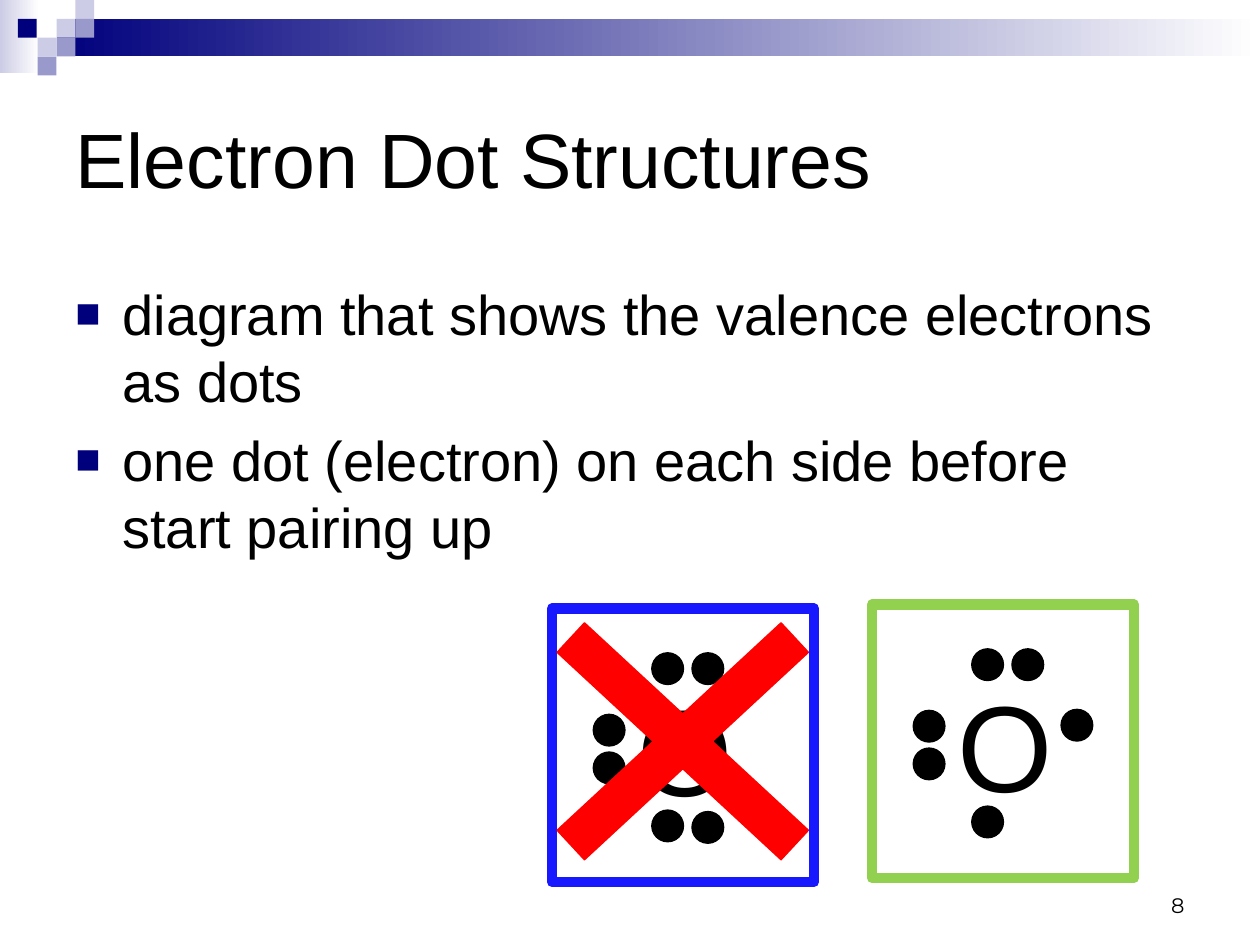
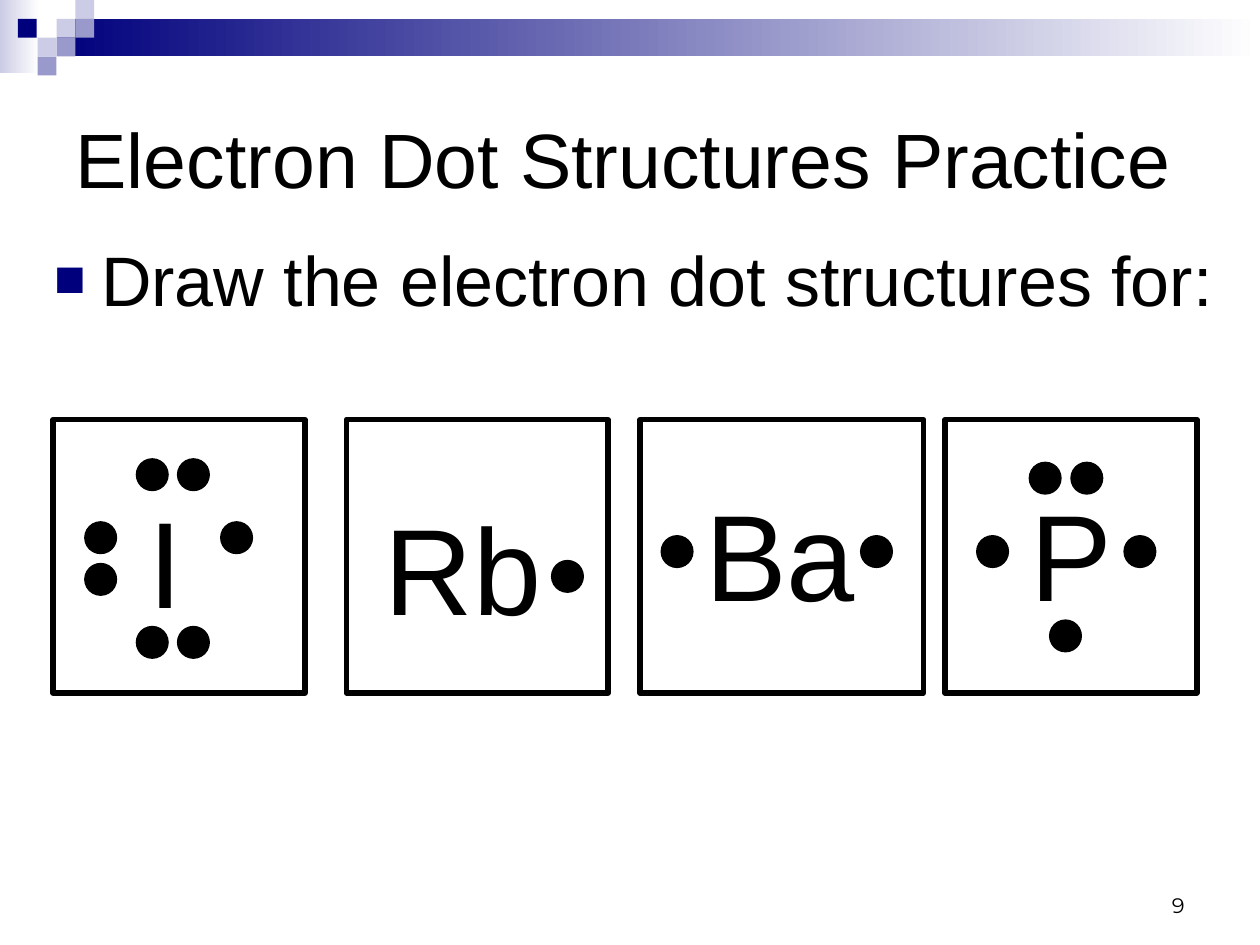
from lxml.etree import SubElement as Sub
from pptx import Presentation
from pptx.dml.color import RGBColor as Rgb
from pptx.enum.shapes import MSO_SHAPE as Kind
from pptx.enum.text import MSO_ANCHOR as Anchor, MSO_AUTO_SIZE as Fit, PP_ALIGN as Align
from pptx.oxml.ns import qn
from pptx.util import Cm, Pt

HUES = {
    "black": "000000", "white": "FFFFFF", "navy": "00007D", "pale": "CCCCE6",
    "mid": "9999CC", "blue": "1818FF", "green": "92D050", "red": "FF0000",
}
FONT = "Arial"
TILE = 0.38
TILES = [(3, 1, "pale"), (4, 0, "pale"), (4, 1, "mid"), (2, 2, "pale"),
         (0.95, 1, "navy"), (3, 2, "mid"), (2, 3, "mid")]
DOT = 0.64
BOX_H = 5.51
OXY = [(2.01, 0.89), (2.82, 0.89), (0.83, 2.13), (0.83, 2.89), (2.01, 4.06)]
ROW_Y = 8.46
ROW = [
    ("I", 1.07, 5.08, (1.68, 1.22, 1.7),
     [(1.68, 0.79), (2.51, 0.79), (0.64, 2.06), (0.64, 2.9),
      (3.38, 2.06), (1.68, 4.17), (2.51, 4.17)]),
    ("Rb", 6.98, 5.28, (0.53, 1.35, 4.24), [(4.14, 2.84)]),
    ("Ba", 12.9, 5.72, (1.07, 1.07, 3.81), [(0.43, 2.34), (4.45, 2.34)]),
    ("P", 19.05, 5.08, (1.47, 1.07, 2.11),
     [(1.7, 0.86), (2.54, 0.86), (0.64, 2.34), (3.61, 2.34), (2.11, 4.04)]),
]


def hue(name):
    return Rgb.from_string(HUES[name])


def add_run(para, text, size, font=FONT):
    run = para.add_run()
    run.text = text
    run.font.size = Pt(size)
    run.font.name = font
    run.font.color.rgb = hue("black")


def add_form(slide, kind, area, fill=None, line=None, width=0.75):
    form = slide.shapes.add_shape(kind, *map(Cm, area))
    form.shadow.inherit = False
    if isinstance(fill, tuple):
        form.fill.gradient()
        form.fill.gradient_angle = 0
        for stop, name in zip(form.fill.gradient_stops, fill):
            stop.color.rgb = hue(name)
    elif fill:
        form.fill.solid()
        form.fill.fore_color.rgb = hue(fill)
    else:
        form.fill.background()
    if line:
        form.line.color.rgb = hue(line)
        form.line.width = Pt(width)
    else:
        form.line.fill.background()
    return form


def add_text(slide, area):
    frame = slide.shapes.add_textbox(*map(Cm, area)).text_frame
    frame.word_wrap = True
    return frame


def add_band(slide):
    add_form(slide, Kind.RECTANGLE, (0, 0, 0.79, 1.47), ("pale", "white"))
    add_form(slide, Kind.RECTANGLE, (3 * TILE, TILE, 24.26, 2 * TILE), ("navy", "white"))
    for col, row, name in TILES:
        add_form(slide, Kind.RECTANGLE, (col * TILE, row * TILE, TILE, TILE), name)


def add_title(slide, text):
    title = slide.shapes.title
    title.left, title.top, title.width, title.height = map(Cm, (1.27, 1.27, 22.86, 3.81))
    frame = title.text_frame
    frame.auto_size = Fit.NONE
    frame.vertical_anchor = Anchor.MIDDLE
    para = frame.paragraphs[0]
    para.alignment = Align.LEFT
    add_run(para, text, 44)


def add_list(slide, area, items, size):
    frame = add_text(slide, area)
    for i, item in enumerate(items):
        para = frame.add_paragraph() if i else frame.paragraphs[0]
        props = para._p.get_or_add_pPr()
        props.set("marL", str(Cm(0.95)))
        props.set("indent", str(-Cm(0.95)))
        space = Sub(props, qn("a:spcBef"))
        Sub(space, qn("a:spcPct"), val="20000")
        paint = Sub(props, qn("a:buClr"))
        Sub(paint, qn("a:srgbClr"), val=HUES["navy"])
        Sub(props, qn("a:buSzPct"), val="75000")
        Sub(props, qn("a:buFont"), typeface=FONT)
        Sub(props, qn("a:buChar"), char="■")
        add_run(para, item, size)


def add_page(slide, num):
    frame = add_text(slide, (22.66, 17.35, 1.47, 1.27))
    frame.vertical_anchor = Anchor.BOTTOM
    para = frame.paragraphs[0]
    para.alignment = Align.RIGHT
    add_run(para, str(num), 12, "Montserrat")


def add_atom(slide, sign, left, top, width, place, dots, line="black", weight=3):
    dx, dy, wide = place
    frame = add_text(slide, (left + dx, top + dy, wide, 3.25))
    frame.auto_size = Fit.SHAPE_TO_FIT_TEXT
    add_run(frame.paragraphs[0], sign, 70)
    add_form(slide, Kind.RECTANGLE, (left, top, width, BOX_H), None, line, weight)
    for x, y in dots:
        add_form(slide, Kind.OVAL, (left + x, top + y, DOT, DOT), "black", "black")


def add_slide(deck, title, num):
    slide = deck.slides.add_slide(deck.slide_layouts[5])
    add_band(slide)
    add_title(slide, title)
    add_page(slide, num)
    return slide


def main():
    deck = Presentation()
    deck.slide_width, deck.slide_height = Cm(25.4), Cm(19.05)

    rules = add_slide(deck, "Electron Dot Structures", 8)
    add_list(rules, (1.27, 5.51, 22.86, 10.8),
             ["diagram that shows the valence electrons as dots",
              "one dot (electron) on each side before start pairing up"], 32)
    for left, top, last, line in [(11.13, 12.27, (2.82, 4.09), "blue"),
                                  (17.58, 12.19, (3.81, 2.11), "green")]:
        add_atom(rules, "O", left, top, 5.28, (1.47, 1.2, 2.34), OXY + [last], line, 6)
    cross = add_form(rules, Kind.MATH_MULTIPLY, (9.42, 10.92, 8.69, 8.05), "red", "red")
    cross.adjustments[0] = 0.101

    drill = add_slide(deck, "Electron Dot Structures Practice", 9)
    add_list(drill, (0.84, 4.65, 23.93, 2.54), ["Draw the electron dot structures for:"], 40)
    for sign, left, width, place, dots in ROW:
        add_atom(drill, sign, left, ROW_Y, width, place, dots)

    deck.save("out.pptx")


if __name__ == "__main__":
    main()
